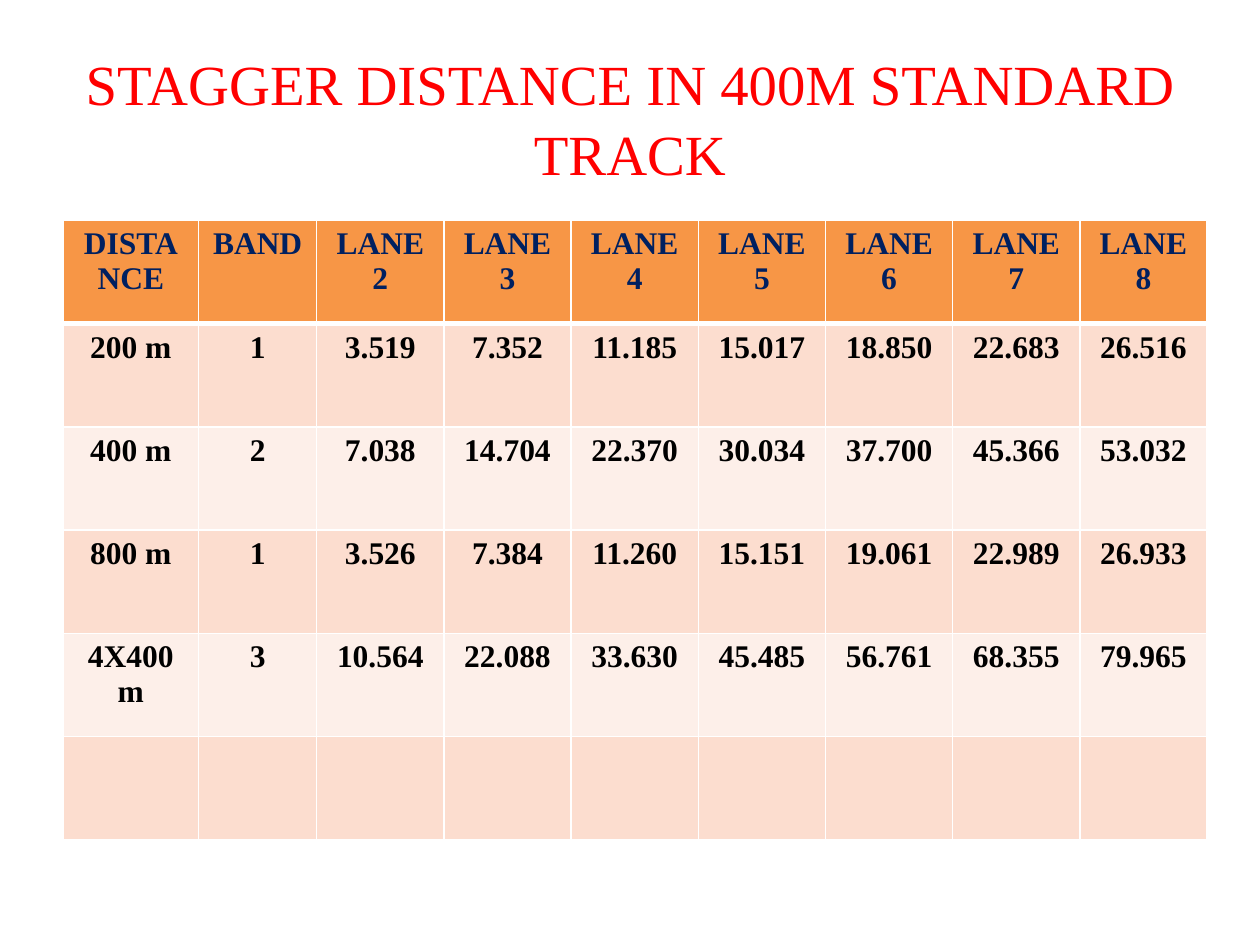
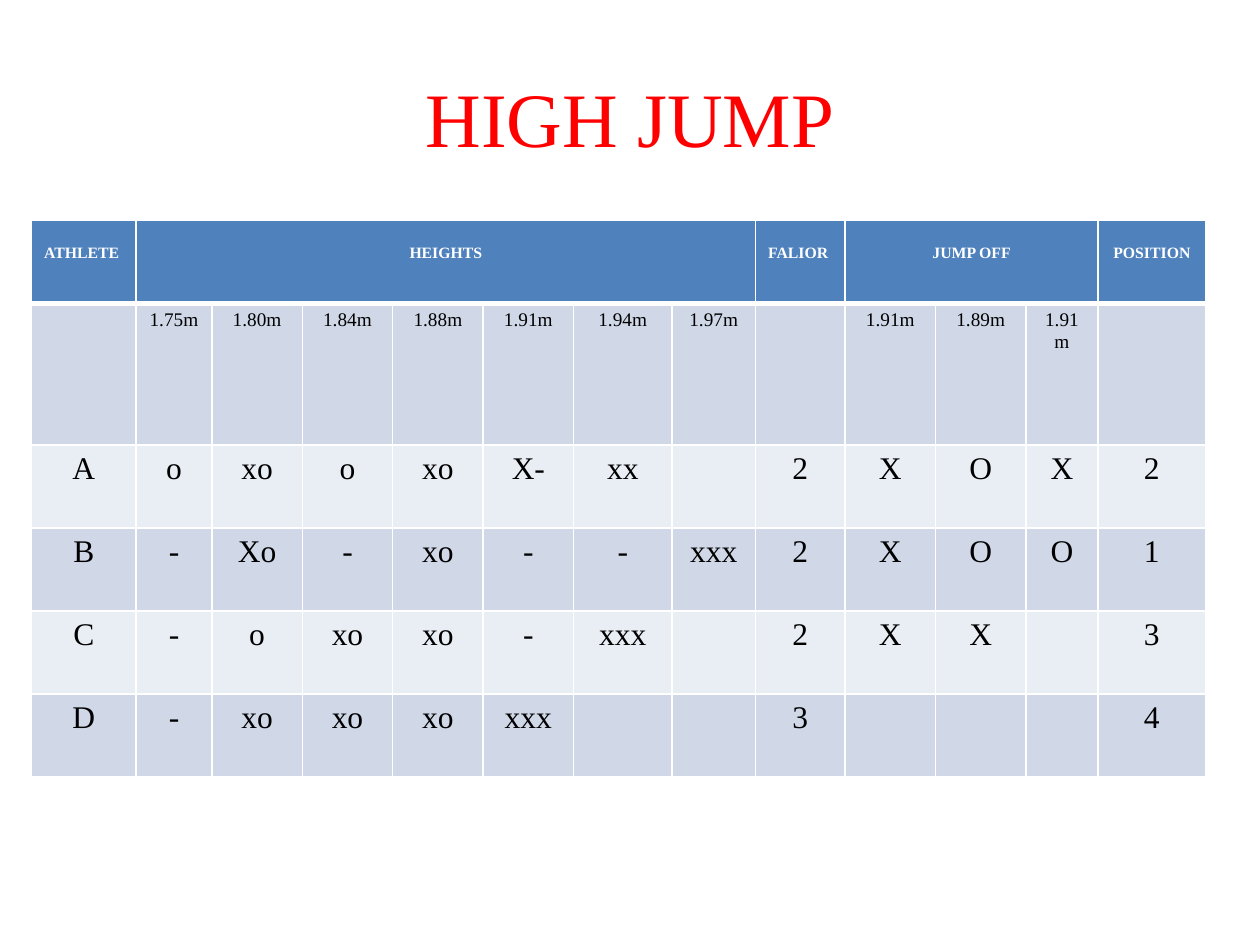
from dataclasses import dataclass

from lxml import etree
from pptx import Presentation
from pptx.dml.color import RGBColor
from pptx.enum.text import MSO_ANCHOR, MSO_AUTO_SIZE, PP_ALIGN
from pptx.oxml.ns import qn
from pptx.util import Pt

LEFT, CENTER = PP_ALIGN.LEFT, PP_ALIGN.CENTER
MIDDLE, NO_AUTOFIT = MSO_ANCHOR.MIDDLE, MSO_AUTO_SIZE.NONE
TITLE_ONLY = 5


@dataclass(frozen=True)
class Theme:
    font: str = "Times New Roman"
    title: str = "FF0000"
    body: str = "000000"
    grid: str = "FFFFFF"
    grid_width: float = 1
    header_rule: float = 3
    body_size: float = 18


THEME = Theme()
SLIDE_SIZE = (720, 540)
TITLE_BOX = (36, 21.6, 648, 90)
TABLE_TOP = 126

STAGGER = {
    "title": "STAGGER DISTANCE IN 400M STANDARD TRACK",
    "title_size": 32.4,
    "title_spacing": 1.04,
    # each header: text, columns covered, alignment
    "header": [("DISTANCE", 1, CENTER), ("BAND", 1, CENTER)]
    + [(f"LANE {lane}", 1, CENTER) for lane in range(2, 9)],
    "rows": [
        ("200 m", "1", "3.519", "7.352", "11.185", "15.017", "18.850", "22.683", "26.516"),
        ("400 m", "2", "7.038", "14.704", "22.370", "30.034", "37.700", "45.366", "53.032"),
        ("800 m", "1", "3.526", "7.384", "11.260", "15.151", "19.061", "22.989", "26.933"),
        ("4X400 m", "3", "10.564", "22.088", "33.630", "45.485", "56.761", "68.355", "79.965"),
        ("",) * 9,
    ],
    "left": 36,
    "widths": [77.5, 67.5] + [72.7] * 7,
    "heights": [59] * 6,
    "header_style": {"size": 18, "color": "002060", "bold": True},
    "row_sizes": {},
    "bold": True,
    "header_fill": "F79646",
    "bands": ("FCDDCF", "FDEFE9"),
}

HIGH_JUMP = {
    "title": "HIGH JUMP",
    "title_size": 44,
    "title_spacing": 1,
    "header": [
        ("ATHLETE", 1, LEFT), ("HEIGHTS", 7, CENTER), ("FALIOR", 1, LEFT),
        ("JUMP OFF", 3, CENTER), ("POSITION", 1, CENTER),
    ],
    "rows": [
        ("", "1.75m", "1.80m", "1.84m", "1.88m", "1.91m", "1.94m", "1.97m",
         "", "1.91m", "1.89m", "1.91m", ""),
        ("A", "o", "xo", "o", "xo", "X-", "xx", "", "2", "X", "O", "X", "2"),
        ("B", "-", "Xo", "-", "xo", "-", "-", "xxx", "2", "X", "O", "O", "1"),
        ("C", "-", "o", "xo", "xo", "-", "xxx", "", "2", "X", "X", "", "3"),
        ("D", "-", "xo", "xo", "xo", "xxx", "", "", "3", "", "", "", "4"),
    ],
    "left": 18,
    "widths": [59.8, 43.3, 51.7, 51.7, 51.7, 51.7, 56.2, 47.8, 51.2, 51.7, 51.7, 41.1, 61.7],
    "heights": [47.4, 81] + [47.4] * 4,
    "header_style": {"size": 9, "color": "FFFFFF", "bold": True, "spacing": 2},
    "row_sizes": {1: 11},
    "bold": False,
    "header_fill": "4F81BD",
    "bands": ("D0D8E8", "E9EDF4"),
}


def write(frame, text, size, color, bold=False, align=CENTER, spacing=None):
    frame.text = text
    paragraph = frame.paragraphs[0]
    paragraph.alignment = align
    paragraph.line_spacing = spacing
    for run in paragraph.runs:
        run.font.name = THEME.font
        run.font.size = Pt(size)
        run.font.bold = bold
        run.font.color.rgb = RGBColor.from_string(color)


def draw_borders(cell, top, bottom):
    properties = cell._tc.get_or_add_tcPr()
    sides = {"lnL": THEME.grid_width, "lnR": THEME.grid_width, "lnT": top, "lnB": bottom}
    for side, width in sides.items():
        line = etree.SubElement(properties, qn(f"a:{side}"), w=str(Pt(width)))
        fill = etree.SubElement(line, qn("a:solidFill"))
        etree.SubElement(fill, qn("a:srgbClr"), val=THEME.grid)


def paint_cells(table, content):
    for row_index, row in enumerate(table.rows):
        top = THEME.header_rule if row_index == 1 else THEME.grid_width
        bottom = THEME.header_rule if row_index == 0 else THEME.grid_width
        color = content["bands"][(row_index - 1) % 2] if row_index else content["header_fill"]
        for cell in row.cells:
            draw_borders(cell, top, bottom)
            cell.fill.solid()
            cell.fill.fore_color.rgb = RGBColor.from_string(color)


def add_results_table(slide, content):
    widths, heights = content["widths"], content["heights"]
    table = slide.shapes.add_table(
        len(heights), len(widths), Pt(content["left"]), Pt(TABLE_TOP),
        Pt(sum(widths)), Pt(sum(heights)),
    ).table
    for column, width in zip(table.columns, widths):
        column.width = Pt(width)
    for row, height in zip(table.rows, heights):
        row.height = Pt(height)
    paint_cells(table, content)

    start = 0
    for heading, span, align in content["header"]:
        cell = table.cell(0, start)
        if span > 1:
            cell.merge(table.cell(0, start + span - 1))
        write(cell.text_frame, heading, align=align, **content["header_style"])
        start += span

    for row_index, values in enumerate(content["rows"], start=1):
        size = content["row_sizes"].get(row_index, THEME.body_size)
        for column_index, value in enumerate(values):
            if value:
                write(table.cell(row_index, column_index).text_frame, value,
                      size, THEME.body, content["bold"])


def add_slide(deck, content):
    slide = deck.slides.add_slide(deck.slide_layouts[TITLE_ONLY])
    title = slide.shapes.title
    title.left, title.top, title.width, title.height = map(Pt, TITLE_BOX)
    write(title.text_frame, content["title"], content["title_size"], THEME.title,
          spacing=content["title_spacing"])
    title.text_frame.vertical_anchor = MIDDLE
    title.text_frame.auto_size = NO_AUTOFIT
    add_results_table(slide, content)


def main():
    deck = Presentation()
    deck.slide_width, deck.slide_height = map(Pt, SLIDE_SIZE)
    for content in (STAGGER, HIGH_JUMP):
        add_slide(deck, content)
    deck.save("out.pptx")


if __name__ == "__main__":
    main()
